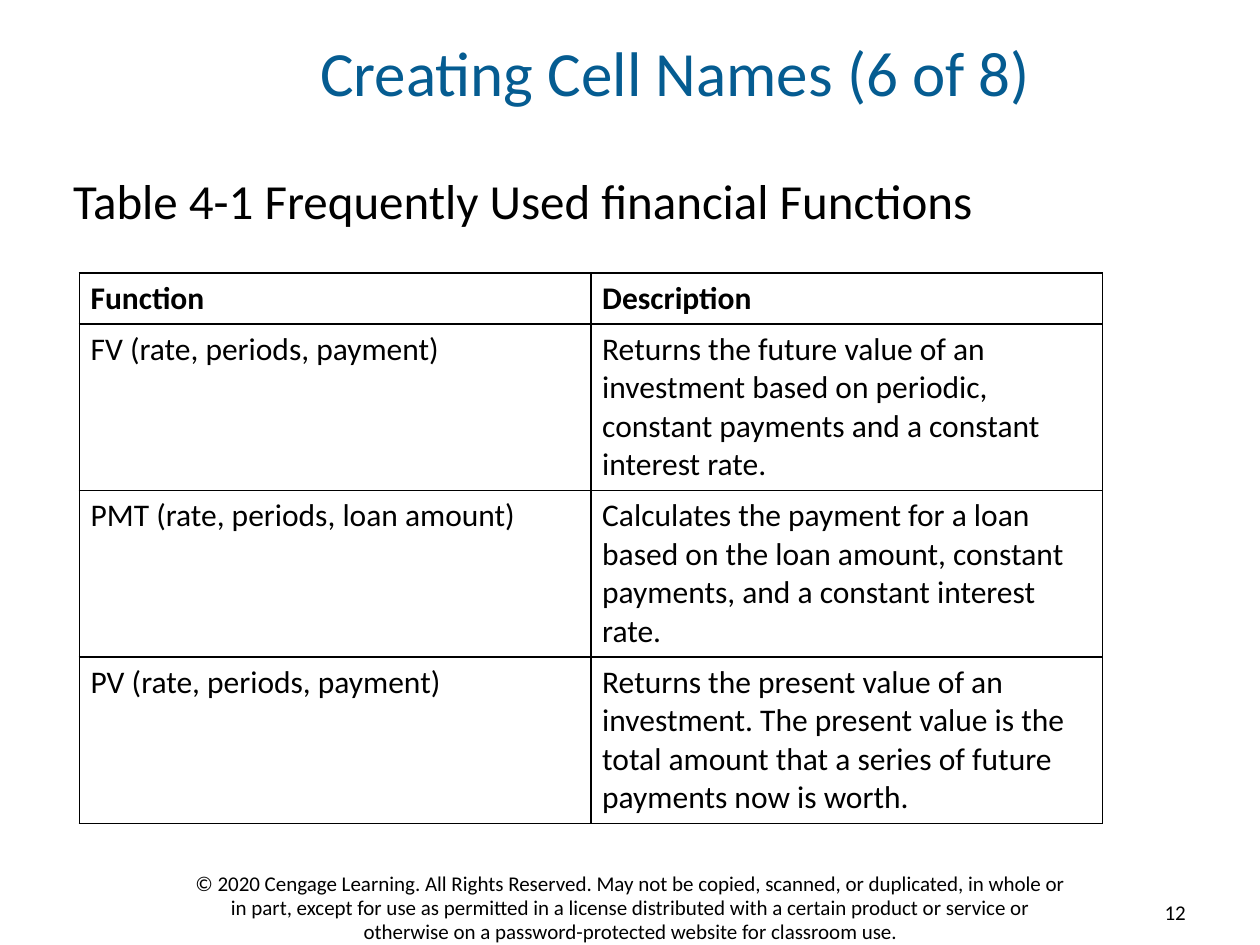
from pptx import Presentation
from pptx.dml.color import RGBColor
from pptx.enum.text import MSO_ANCHOR, MSO_AUTO_SIZE, PP_ALIGN
from pptx.oxml import parse_xml
from pptx.oxml.ns import nsdecls
from pptx.util import Inches, Pt

BLACK = RGBColor(0x00, 0x00, 0x00)
BLUE = RGBColor(0x05, 0x5C, 0x91)
FONT = "Calibri"

FUNCTIONS = [
    ("Function", "Description"),
    ("FV (rate, periods, payment)",
     "Returns the future value of an investment based on periodic, "
     "constant payments and a constant interest rate."),
    ("PMT (rate, periods, loan amount)",
     "Calculates the payment for a loan based on the loan amount, "
     "constant payments, and a constant interest rate."),
    ("PV (rate, periods, payment)",
     "Returns the present value of an investment. The present value is the "
     "total amount that a series of future payments now is worth."),
]
COPYRIGHT = (
    "© 2020 Cengage Learning. All Rights Reserved. May not be copied, scanned, "
    "or duplicated, in whole or in part, except for use as permitted in a license "
    "distributed with a certain product or service or otherwise on a "
    "password-protected website for classroom use."
)


class Deck:
    def __init__(self, width, height):
        self.prs = Presentation()
        self.prs.slide_width = Inches(width)
        self.prs.slide_height = Inches(height)
        self.s = self.prs.slides.add_slide(self.prs.slide_layouts[1])

    def box(self, x, y, w, h):
        sw, sh = self.prs.slide_width, self.prs.slide_height
        return int(x * sw), int(y * sh), int(w * sw), int(h * sh)

    def style_text(self, tf, text, size, color=BLACK, bold=False,
                   align=PP_ALIGN.LEFT, spacing=1.0):
        tf.text = text
        p = tf.paragraphs[0]
        p.alignment, p.line_spacing, p.space_before = align, spacing, Pt(0)
        font = p.runs[0].font
        font.name, font.size, font.bold = FONT, Pt(size), bold
        font.color.rgb = color

    def placeholder(self, idx, area, text, size, anchor, **style):
        sp = self.s.placeholders[idx]
        sp.left, sp.top, sp.width, sp.height = self.box(*area)
        tf = sp.text_frame
        tf.margin_left = tf.margin_right = tf.margin_top = tf.margin_bottom = 0
        tf.auto_size = MSO_AUTO_SIZE.NONE
        tf.vertical_anchor = anchor
        self.style_text(tf, text, size, **style)
        pPr = tf.paragraphs[0]._p.get_or_add_pPr()
        pPr.set("marL", "0")
        pPr.set("indent", "0")
        pPr.append(parse_xml(f"<a:buNone {nsdecls('a')}/>"))

    def text(self, area, text, size, anchor=MSO_ANCHOR.TOP, wrap=True, **style):
        tf = self.s.shapes.add_textbox(*self.box(*area)).text_frame
        tf.word_wrap = wrap
        tf.vertical_anchor = anchor
        self.style_text(tf, text, size, **style)

    def border(self, cell, width=1):
        tcPr = cell._tc.get_or_add_tcPr()
        for i, side in enumerate(("lnL", "lnR", "lnT", "lnB")):
            tcPr.insert(i, parse_xml(
                f'<a:{side} {nsdecls("a")} w="{Pt(width)}"><a:solidFill>'
                f'<a:srgbClr val="{BLACK}"/></a:solidFill></a:{side}>'))

    def table(self, area, rows, heights, size):
        table = self.s.shapes.add_table(
            len(rows), len(rows[0]), *self.box(*area)).table
        table.first_row = table.horz_banding = False
        for r, (values, height) in enumerate(zip(rows, heights)):
            table.rows[r].height = Inches(height)
            for c, value in enumerate(values):
                cell = table.cell(r, c)
                cell.margin_left = cell.margin_right = Inches(0.09)
                cell.margin_top = cell.margin_bottom = Inches(0.05)
                cell.vertical_anchor = MSO_ANCHOR.TOP if r else MSO_ANCHOR.BOTTOM
                cell.fill.background()
                self.border(cell)
                self.style_text(cell.text_frame, value, size, bold=r == 0)


def main():
    deck = Deck(10, 7.5)
    deck.placeholder(0, (0.083, 0.02, 0.906, 0.124), "Creating Cell Names (6 of 8)",
                     36, MSO_ANCHOR.MIDDLE, color=BLUE,
                     align=PP_ALIGN.CENTER, spacing=0.85)
    deck.placeholder(1, (0.058, 0.185, 0.808, 0.06),
                     "Table 4-1 Frequently Used financial Functions",
                     28, MSO_ANCHOR.TOP, spacing=0.95)
    deck.table((0.063, 0.289, 0.812, 0.573), FUNCTIONS, (0.4, 0.99, 0.99, 1.29), 18)
    deck.text((0.142, 0.917, 0.717, 0.08), COPYRIGHT, 12,
              align=PP_ALIGN.CENTER, spacing=0.95)
    deck.text((0.91, 0.945, 0.041, 0.04), "12", 12, anchor=MSO_ANCHOR.MIDDLE,
              wrap=False, align=PP_ALIGN.RIGHT)
    deck.prs.save("out.pptx")


if __name__ == "__main__":
    main()
